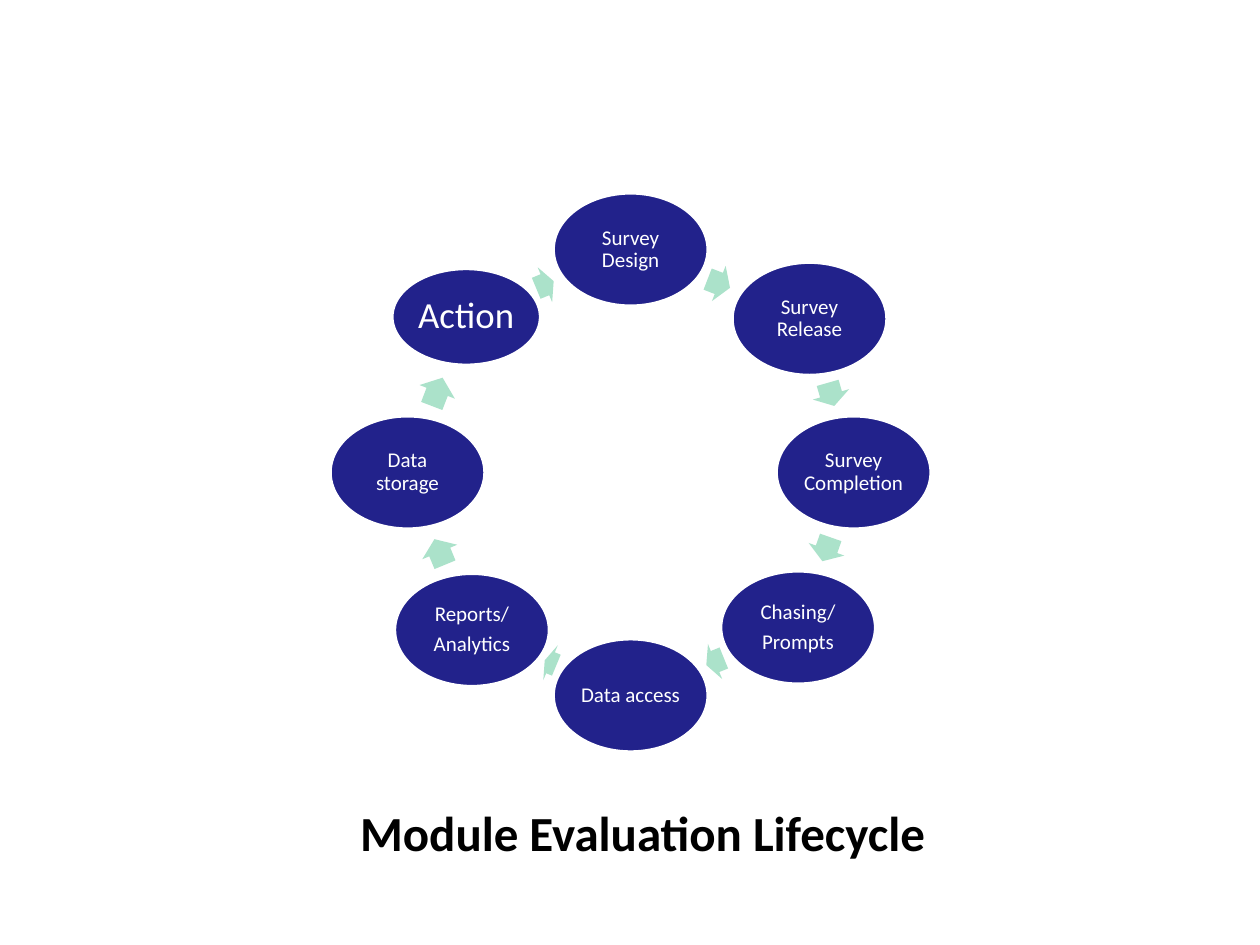
import pptx
import pptx.dml.color
import pptx.enum.shapes
import pptx.enum.text
import pptx.util

Pt = pptx.util.Pt
SHAPES = pptx.enum.shapes.MSO_SHAPE
COLORS = {"stage": "22228B", "arrow": "ABE2CA", "light": "FFFFFF", "title": "000000"}

# label, stage left and top, then left, top, width and rotation of the arrow after it
STAGES = [
    ("Survey Design", 316.1, 110.2, (403.9, 151.2, 13.7, 21.2)),
    ("Survey Release", 418.3, 149.8, (468, 214.6, 13.7, 74)),
    ("Survey Completion", 443.5, 237.6, (465.1, 303.1, 14.4, 109.4)),
    ("Chasing/\nPrompts", 411.8, 326.2, (403.2, 367.2, 10.8, 157.9)),
    ("Data access", 316.1, 365, (311, 367.9, 7.2, 202.5)),
    ("Reports/\nAnalytics", 225.4, 327.6, (243.4, 304.6, 15.8, 247.5)),
    ("Data storage", 188.6, 237.6, (241.2, 213.1, 17.3, 291)),
    ("Action", 223.9, 153.4, (306, 151.9, 10.8, 337.5)),
]
STAGE_FORMAT = {"width": 88.6, "height": 64.8, "size": 12, "inset": 1.44}
ACTION_FORMAT = {"width": 85, "height": 55.4, "size": 21, "inset": 2.16}


def rgb(name):
    return pptx.dml.color.RGBColor.from_string(COLORS[name])


def write_text(frame, text, size, color, bold=False, line_spacing=None, gap=0, inset=None):
    """Fill a frame with centred paragraphs, one per line of text."""
    frame.word_wrap = True
    frame.auto_size = pptx.enum.text.MSO_AUTO_SIZE.NONE
    frame.vertical_anchor = pptx.enum.text.MSO_ANCHOR.MIDDLE
    if inset is not None:
        frame.margin_left = frame.margin_right = Pt(inset)
        frame.margin_top = frame.margin_bottom = Pt(inset)
    frame.text = text
    for index, paragraph in enumerate(frame.paragraphs):
        paragraph.alignment = pptx.enum.text.PP_ALIGN.CENTER
        if line_spacing:
            paragraph.line_spacing = line_spacing
        if index:
            paragraph.space_before = Pt(gap)
        for run in paragraph.runs:
            run.font.name = "Calibri"
            run.font.size = Pt(size)
            run.font.bold = bold
            run.font.color.rgb = rgb(color)


class LifecycleSlide:
    def __init__(self, slide):
        self.slide = slide

    def shape(self, preset, left, top, width, height, fill):
        shape = self.slide.shapes.add_shape(preset, Pt(left), Pt(top), Pt(width), Pt(height))
        shape.shadow.inherit = False
        shape.fill.solid()
        shape.fill.fore_color.rgb = rgb(fill)
        return shape

    def stage(self, label, left, top, width, height, size, inset):
        oval = self.shape(SHAPES.OVAL, left, top, width, height, "stage")
        oval.line.color.rgb = rgb("light")
        oval.line.width = Pt(2)
        write_text(oval.text_frame, label, size, "light",
                   line_spacing=0.9, gap=size * 0.35, inset=inset)

    def arrow(self, left, top, width, rotation):
        arrow = self.shape(SHAPES.RIGHT_ARROW, left, top, width, 21.6, "arrow")
        arrow.line.fill.background()
        arrow.adjustments[0] = 0.6
        arrow.adjustments[1] = 0.5
        arrow.rotation = rotation

    def title(self, text):
        title = self.slide.shapes.title
        title.left, title.top, title.width, title.height = Pt(61.2), Pt(450.7), Pt(612), Pt(49)
        write_text(title.text_frame, text, 28, "title", bold=True)


def main():
    presentation = pptx.Presentation()
    presentation.slide_width, presentation.slide_height = Pt(720), Pt(540)
    title_only = presentation.slide_layouts[5]
    lifecycle = LifecycleSlide(presentation.slides.add_slide(title_only))
    for label, left, top, arrow in STAGES:
        style = ACTION_FORMAT if label == "Action" else STAGE_FORMAT
        lifecycle.stage(label, left, top, **style)
        lifecycle.arrow(*arrow)
    lifecycle.title("Module Evaluation Lifecycle")
    presentation.save("out.pptx")


if __name__ == "__main__":
    main()
